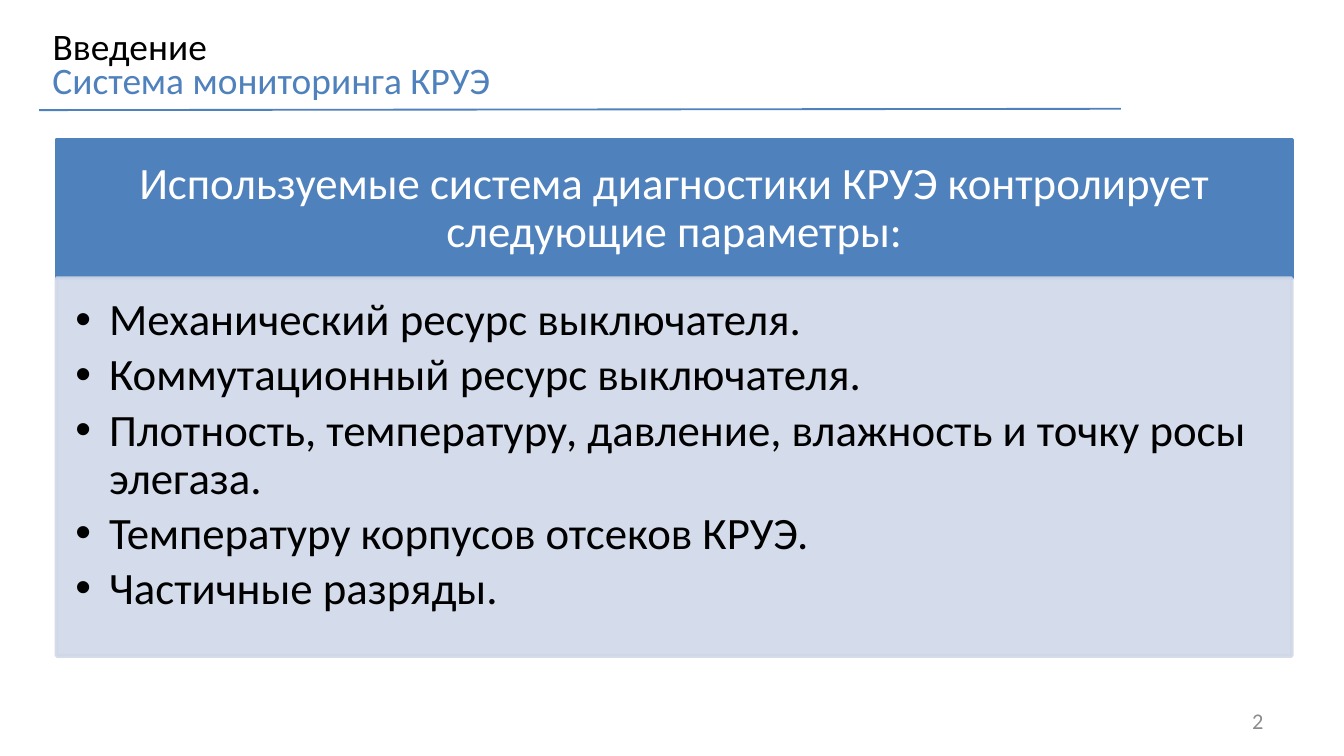
from dataclasses import dataclass

from lxml import etree
from pptx import Presentation
from pptx.dml.color import RGBColor
from pptx.enum import shapes, text
from pptx.oxml import ns
from pptx.util import Pt


@dataclass(frozen=True)
class Theme:
    font: str = "Calibri"
    accent: str = "4F81BD"
    panel: str = "D0D8E8"
    dark: str = "000000"
    light: str = "FFFFFF"
    muted: str = "8C8C8C"
    heading_size: int = 20
    body_size: int = 24
    number_size: int = 12


THEME = Theme()
LEFT, WIDTH = 30.3, 661.7
HEADER_TOP, HEADER_HEIGHT = 74.9, 74.2
LIST_HEIGHT = 202.3
PARAMETERS = [
    "Механический ресурс выключателя.",
    "Коммутационный ресурс выключателя.",
    "Плотность, температуру, давление, влажность и точку росы элегаза.",
    "Температуру корпусов отсеков КРУЭ.",
    "Частичные разряды.",
]


def color(value):
    return RGBColor.from_string(value)


def place(shape, left, top, width, height):
    shape.left, shape.top = Pt(left), Pt(top)
    shape.width, shape.height = Pt(width), Pt(height)


def write(shape, lines, size=THEME.heading_size, ink=THEME.dark,
          align=text.PP_ALIGN.LEFT, anchor=text.MSO_ANCHOR.TOP,
          insets=(7.2, 3.6, 7.2, 3.6), spacing=1.0, before=0, after=0):
    """Fill a shape with one paragraph per line; insets are left, top, right, bottom."""
    frame = shape.text_frame
    frame.word_wrap = True
    frame.auto_size = text.MSO_AUTO_SIZE.NONE
    frame.vertical_anchor = anchor
    (frame.margin_left, frame.margin_top,
     frame.margin_right, frame.margin_bottom) = map(Pt, insets)
    frame.text = "\n".join(lines)
    for paragraph in frame.paragraphs:
        paragraph.alignment = align
        paragraph.line_spacing = spacing
        paragraph.space_before, paragraph.space_after = Pt(before), Pt(after)
        for run in paragraph.runs:
            run.font.name = THEME.font
            run.font.size = Pt(size)
            run.font.color.rgb = color(ink)


def add_text(slide, box, line, **style):
    shape = slide.shapes.add_textbox(*map(Pt, box))
    write(shape, [line], **style)


def paint(shape, fill, opacity=100):
    shape.fill.solid()
    shape.fill.fore_color.rgb = color(fill)
    shape.line.color.rgb = color(fill)
    shape.line.width = Pt(2)
    if opacity < 100:
        for tone in shape.element.spPr.iter(ns.qn("a:srgbClr")):
            etree.SubElement(tone, ns.qn("a:alpha"), val=str(opacity * 1000))


def add_bullets(shape, indent):
    for paragraph in shape.text_frame.paragraphs:
        properties = paragraph._p.get_or_add_pPr()
        properties.set("marL", str(Pt(indent)))
        properties.set("indent", str(-Pt(indent)))
        etree.SubElement(properties, ns.qn("a:buFont"), typeface="Arial")
        etree.SubElement(properties, ns.qn("a:buChar"), char="•")


def add_rule(slide, start, end):
    rule = slide.shapes.add_connector(
        shapes.MSO_CONNECTOR.STRAIGHT, *map(Pt, start + end))
    rule.line.color.rgb = color(THEME.accent)
    rule.line.width = Pt(1)
    etree.SubElement(rule.element.spPr, ns.qn("a:effectLst"))


def add_header(slide, line):
    header = slide.shapes.add_shape(
        shapes.MSO_SHAPE.RECTANGLE,
        *map(Pt, (LEFT, HEADER_TOP, WIDTH, HEADER_HEIGHT)))
    header.shadow.inherit = False
    paint(header, THEME.accent)
    write(header, [line], size=THEME.body_size, ink=THEME.light,
          align=text.PP_ALIGN.CENTER, anchor=text.MSO_ANCHOR.MIDDLE,
          insets=(13.4, 7.7, 13.4, 7.7), spacing=0.9)
    return header


def main():
    presentation = Presentation()
    presentation.slide_width, presentation.slide_height = Pt(720), Pt(405)
    slide = presentation.slides.add_slide(presentation.slide_layouts[1])
    title, body = slide.placeholders

    # Title, subtitle and the rule below them
    place(title, 21, 8.6, 648, 31.5)
    write(title, ["Введение"])
    add_text(slide, (21, 31.7, 641, 27.4), "Система мониторинга КРУЭ",
             ink=THEME.accent, align=text.PP_ALIGN.JUSTIFY,
             spacing=0.8, before=4)
    add_rule(slide, (600.5, 58.3), (21, 59))

    # Header band with the list panel directly below
    header = add_header(
        slide,
        "Используемые система диагностики КРУЭ контролирует следующие параметры:")
    place(body, LEFT, HEADER_TOP + HEADER_HEIGHT, WIDTH, LIST_HEIGHT)
    paint(body, THEME.panel, opacity=90)
    write(body, PARAMETERS, size=THEME.body_size,
          insets=(10.1, 10.1, 13.4, 15.1), spacing=0.9, after=3.6)
    add_bullets(body, 18)
    header.element.addnext(body.element)

    # Page number
    add_text(slide, (516, 375.3, 168, 21.6), "2", size=THEME.number_size,
             ink=THEME.muted, align=text.PP_ALIGN.RIGHT,
             anchor=text.MSO_ANCHOR.MIDDLE)

    presentation.save("out.pptx")


if __name__ == "__main__":
    main()
